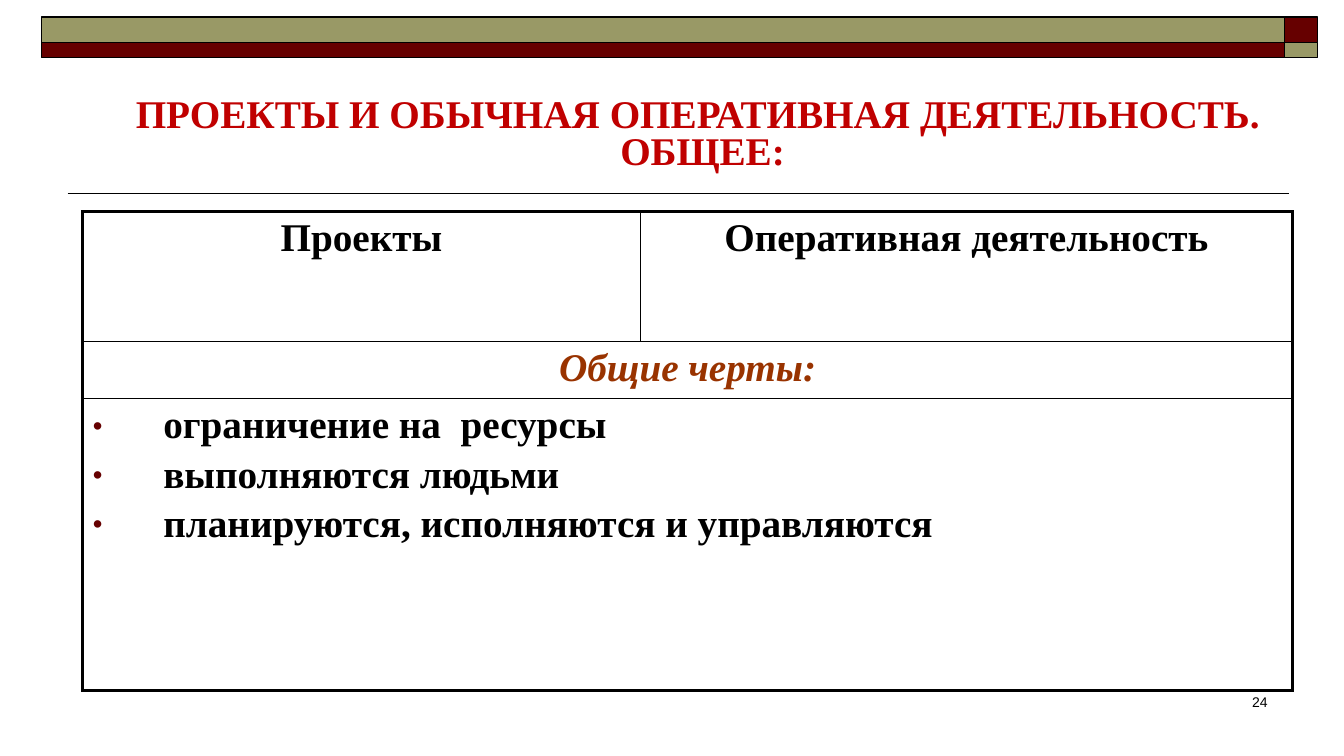
from dataclasses import dataclass

from lxml import etree
from pptx import Presentation
from pptx.dml.color import RGBColor
from pptx.enum import shapes, text
from pptx.oxml import ns
from pptx.util import Inches, Pt


@dataclass(frozen=True)
class Theme:
    """Colours, fonts and sizes of the slide."""
    maroon: str = "660000"
    olive: str = "999966"
    ink: str = "000000"
    title: str = "C00000"
    accent: str = "993300"
    serif: str = "Times New Roman"
    sans: str = "Arial"
    body_size: float = 28
    number_size: float = 10
    thin: float = 1
    thick: float = 2.25


THEME = Theme()
HEADINGS = ["Проекты", "Оперативная деятельность"]
COMMON = "Общие черты:"
FEATURES = ["ограничение на  ресурсы", "выполняются людьми",
            "планируются, исполняются и управляются"]


def rgb(color):
    """Return the colour for a hex value."""
    return RGBColor.from_string(color)


def write(frame, lines, align, color=THEME.ink, size=THEME.body_size,
          face=THEME.serif, bold=True, italic=False):
    """Fill a text frame with evenly styled paragraphs."""
    frame.word_wrap = True
    frame.text = "\n".join(lines)
    for paragraph in frame.paragraphs:
        paragraph.alignment = align
        for run in paragraph.runs:
            font = run.font
            font.name, font.size = face, Pt(size)
            font.bold, font.italic = bold, italic
            font.color.rgb = rgb(color)


def add_bullet(paragraph):
    """Give a paragraph a small maroon bullet and a hanging indent."""
    paragraph.space_after = Pt(4.3)
    props = paragraph._p.get_or_add_pPr()
    props.set("marL", str(Inches(0.7)))
    props.set("indent", str(-Inches(0.7)))
    color = etree.SubElement(props, ns.qn("a:buClr"))
    etree.SubElement(color, ns.qn("a:srgbClr"), val=THEME.maroon)
    etree.SubElement(props, ns.qn("a:buSzPct"), val="70000")
    etree.SubElement(props, ns.qn("a:buFont"), typeface=THEME.sans)
    etree.SubElement(props, ns.qn("a:buChar"), char="•")


def set_borders(cell, widths):
    """Draw the left, right, top and bottom borders of a cell."""
    props = cell._tc.get_or_add_tcPr()
    for place, (side, width) in enumerate(zip("LRTB", widths)):
        line = etree.Element(ns.qn(f"a:ln{side}"), w=str(Pt(width)))
        fill = etree.SubElement(line, ns.qn("a:solidFill"))
        etree.SubElement(fill, ns.qn("a:srgbClr"), val=THEME.ink)
        props.insert(place, line)


def add_banner(slide, left, top, width, height):
    """Draw the two-tone band with its swapped colours at the right end."""
    end, upper = 0.33, 0.25
    columns = [(left, width - end), (left + width - end, end)]
    rows = [(top, upper), (top + upper, height - upper)]
    for r, (y, h) in enumerate(rows):
        for c, (x, w) in enumerate(columns):
            block = slide.shapes.add_shape(
                shapes.MSO_SHAPE.RECTANGLE,
                Inches(x), Inches(y), Inches(w), Inches(h))
            block.shadow.inherit = False
            block.fill.solid()
            block.fill.fore_color.rgb = rgb(THEME.olive if r == c else THEME.maroon)
            block.line.color.rgb = rgb(THEME.ink)
            block.line.width = Pt(THEME.thin)


def add_title(slide, left, top, width, height):
    """Place the heading and the rule below it."""
    heading = slide.shapes.add_textbox(
        Inches(left), Inches(top), Inches(width), Inches(height)).text_frame
    write(heading, ["ПРОЕКТЫ И ОБЫЧНАЯ ОПЕРАТИВНАЯ ДЕЯТЕЛЬНОСТЬ.\v ОБЩЕЕ:"],
          text.PP_ALIGN.CENTER, THEME.title)
    heading.vertical_anchor = text.MSO_ANCHOR.BOTTOM
    heading.paragraphs[0].line_spacing = 0.8
    y = Inches(top + height + 0.15)
    rule = slide.shapes.add_connector(
        shapes.MSO_CONNECTOR.STRAIGHT,
        Inches(left - 0.22), y, Inches(left + width - 0.17), y)
    rule.line.color.rgb = rgb(THEME.ink)
    rule.line.width = Pt(THEME.thin)
    etree.SubElement(rule._element.spPr, ns.qn("a:effectLst"))


def add_comparison(slide, left, top, width, height):
    """Build the table of features shared by projects and operations."""
    frame = slide.shapes.add_table(
        3, 2, Inches(left), Inches(top), Inches(width), Inches(height))
    table = frame.table
    table.first_row = table.horz_banding = False
    first_column, heading_row, common_row = 5.53, 1.29, 0.54
    for column, w in zip(table.columns, [first_column, width - first_column]):
        column.width = Inches(w)
    row_heights = [heading_row, common_row, height - heading_row - common_row]
    for row, h in zip(table.rows, row_heights):
        row.height = Inches(h)
    for r in (1, 2):
        table.cell(r, 0).merge(table.cell(r, 1))
    for r in range(3):
        for c in range(2):
            cell = table.cell(r, c)
            cell.fill.background()
            outer = [c == 0, c == 1 or r > 0, r == 0, r == 2]
            set_borders(cell, [THEME.thick if edge else THEME.thin for edge in outer])
    for c, name in enumerate(HEADINGS):
        write(table.cell(0, c).text_frame, [name], text.PP_ALIGN.CENTER)
    write(table.cell(1, 0).text_frame, [COMMON], text.PP_ALIGN.CENTER,
          THEME.accent, italic=True)
    features = table.cell(2, 0).text_frame
    write(features, FEATURES, text.PP_ALIGN.LEFT)
    for paragraph in features.paragraphs:
        add_bullet(paragraph)


def add_number(slide, left, top, width, height):
    """Place the slide number."""
    number = slide.shapes.add_textbox(
        Inches(left), Inches(top), Inches(width), Inches(height)).text_frame
    write(number, ["24"], text.PP_ALIGN.RIGHT, size=THEME.number_size,
          face=THEME.sans, bold=False)


def main():
    """Build and save the slide."""
    deck = Presentation()
    deck.slide_width, deck.slide_height = Inches(13.33), Inches(7.5)
    slide = deck.slides.add_slide(deck.slide_layouts[6])
    add_banner(slide, 0.41, 0.17, 12.66, 0.4)
    add_title(slide, 0.89, 0.85, 12.06, 0.92)
    add_comparison(slide, 0.82, 2.1, 12, 4.72)
    add_number(slide, 9.89, 6.83, 2.78, 0.5)
    deck.save("out.pptx")


if __name__ == "__main__":
    main()
